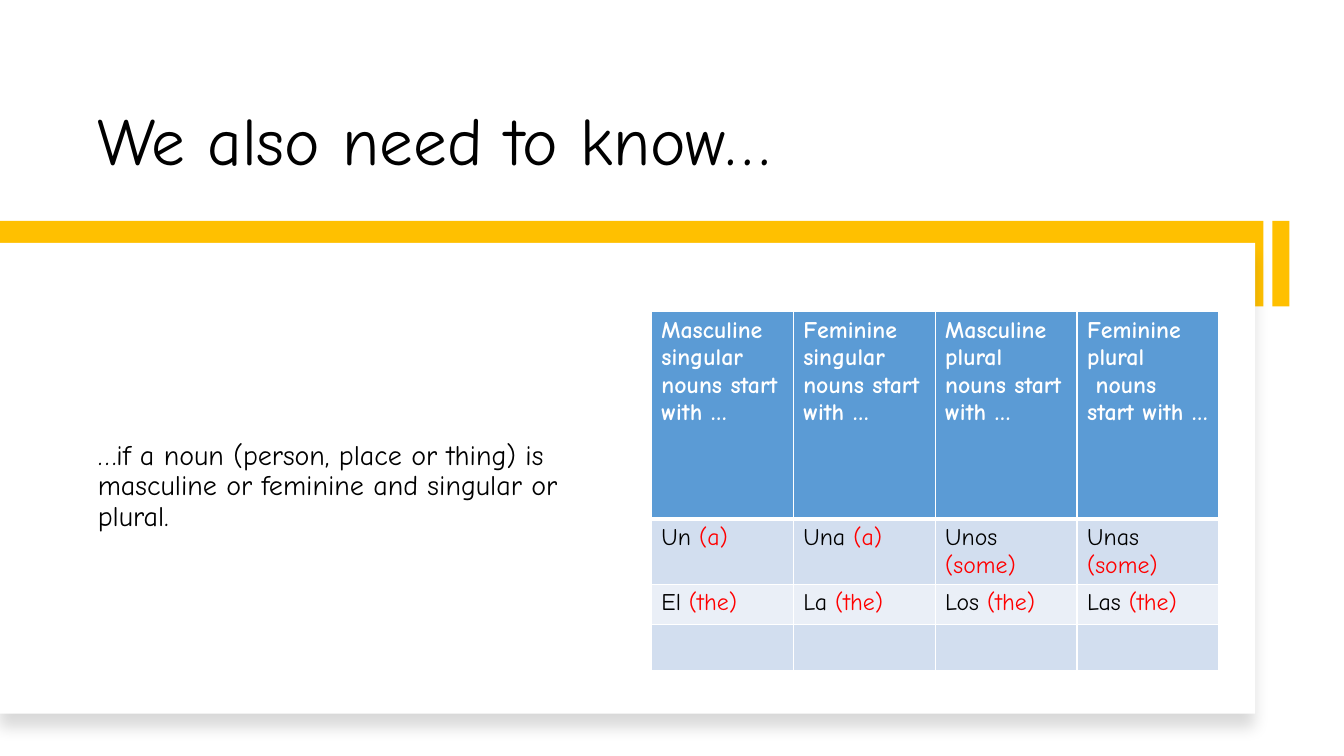
from dataclasses import dataclass

from lxml import etree
from pptx import Presentation
from pptx.dml.color import RGBColor
from pptx.enum import shapes, text
from pptx.oxml import ns
from pptx.util import Inches, Pt

# Content
HEADING = "We also need to know…"
EXPLANATION = ("…if a noun (person, place or thing) is masculine or feminine "
               "and singular or plural.")
NOUN_KINDS = [
    "Masculine singular nouns start with …",
    "Feminine singular\nnouns start with …",
    "Masculine plural\nnouns start with …",
    "Feminine\nplural\n nouns start with …",
]
ARTICLES = [  # (Spanish article, English meaning)
    [("Un ", "(a)"), ("Una ", "(a)"), ("Unos ", "(some)"), ("Unas\n", "(some)")],
    [("El ", "(the)"), ("La ", "(the)"), ("Los ", "(the)"), ("Las ", "(the)")],
    [("", "")] * 4,
]
ROW_HEIGHTS = [2.06, 0.4, 0.4, 0.46]


@dataclass(frozen=True)
class Theme:
    font: str = "Comic Neue"
    title_size: int = 48
    body_size: int = 20
    table_size: int = 17
    ink: str = "000000"
    paper: str = "FFFFFF"
    accent: str = "FFC000"
    meaning: str = "FF0000"
    header: str = "5B9BD5"
    bands: tuple = ("D2DEEF", "EAEFF7")


THEME = Theme()


def box(left, top, width, height):
    return [Inches(n) for n in (left, top, width, height)]


def style(run, size, color, bold=False):
    run.font.name = THEME.font
    run.font.size = Pt(size)
    run.font.bold = bold
    run.font.color.rgb = RGBColor.from_string(color)


def fill_placeholder(holder, words, place, size, anchor):
    holder.left, holder.top, holder.width, holder.height = box(*place)
    frame = holder.text_frame
    frame.text = words
    frame.word_wrap = True
    frame.auto_size = text.MSO_AUTO_SIZE.NONE
    frame.vertical_anchor = anchor
    line = frame.paragraphs[0]
    line.alignment = text.PP_ALIGN.LEFT
    line.line_spacing = 0.9
    style(line.runs[0], size, THEME.ink)
    return line


def add_panel(slide, place, color):
    panel = slide.shapes.add_shape(shapes.MSO_SHAPE.RECTANGLE, *box(*place))
    panel.shadow.inherit = False
    panel.fill.solid()
    panel.fill.fore_color.rgb = RGBColor.from_string(color)
    panel.line.fill.background()
    return panel


def add_soft_shadow(panel):
    effects = panel.element.spPr.find(ns.qn("a:effectLst"))
    shadow = etree.SubElement(
        effects, ns.qn("a:outerShdw"), blurRad=str(Pt(11)), dist=str(Pt(10)),
        dir=str(90 * 60000), algn="t", rotWithShape="0")
    color = etree.SubElement(shadow, ns.qn("a:srgbClr"), val=THEME.ink)
    etree.SubElement(color, ns.qn("a:alpha"), val="15000")


def add_borders(cell, top, bottom):
    props = cell._tc.get_or_add_tcPr()
    for place, (side, width) in enumerate(
            [("L", 1), ("R", 1), ("T", top), ("B", bottom)]):
        edge = etree.Element(ns.qn("a:ln" + side), w=str(Pt(width)))
        solid = etree.SubElement(edge, ns.qn("a:solidFill"))
        etree.SubElement(solid, ns.qn("a:srgbClr"), val=THEME.paper)
        props.insert(place, edge)


def add_article_table(slide):
    frame = slide.shapes.add_table(
        len(ROW_HEIGHTS), len(NOUN_KINDS),
        *box(6.46, 3.09, 5.63, sum(ROW_HEIGHTS)))
    table = frame.table
    table.first_row = table.horz_banding = False
    rows = [[(kind, "") for kind in NOUN_KINDS]] + ARTICLES
    for r, entries in enumerate(rows):
        table.rows[r].height = Inches(ROW_HEIGHTS[r])
        is_header = r == 0
        color = THEME.header if is_header else THEME.bands[(r - 1) % 2]
        for c, (words, meaning) in enumerate(entries):
            cell = table.cell(r, c)
            cell.fill.solid()
            cell.fill.fore_color.rgb = RGBColor.from_string(color)
            add_borders(cell, top=3 if r == 1 else 1, bottom=3 if is_header else 1)
            cell.text = words
            for line in cell.text_frame.paragraphs:
                for run in line.runs:
                    style(run, THEME.table_size,
                          THEME.paper if is_header else THEME.ink, is_header)
            if meaning:
                gloss = cell.text_frame.paragraphs[-1].add_run()
                gloss.text = meaning
                style(gloss, THEME.table_size, THEME.meaning)


def main():
    deck = Presentation()
    deck.slide_width, deck.slide_height = Inches(13.33), Inches(7.5)
    slide = deck.slides.add_slide(deck.slide_layouts[1])
    heading, explanation = slide.placeholders

    # Heading
    fill_placeholder(heading, HEADING, (0.87, 0.42, 11.01, 1.42),
                     THEME.title_size, text.MSO_ANCHOR.BOTTOM)

    # Gold band and white card
    add_panel(slide, (0, 2.19, 12.53, 0.85), THEME.accent)
    card = add_panel(slide, (0, 2.41, 12.45, 4.67), THEME.paper)
    add_soft_shadow(card)

    # Explanation, brought in front of the card and without a bullet
    line = fill_placeholder(explanation, EXPLANATION, (0.87, 2.84, 4.96, 3.98),
                            THEME.body_size, text.MSO_ANCHOR.MIDDLE)
    line.space_before = Pt(10)
    props = line._p.get_or_add_pPr()
    props.set("marL", "0")
    props.set("indent", "0")
    etree.SubElement(props, ns.qn("a:buNone"))
    card.element.addnext(explanation.element)

    # Gold end bar
    add_panel(slide, (12.62, 2.19, 0.17, 0.85), THEME.accent)

    # Articles by gender and number
    add_article_table(slide)

    deck.save("out.pptx")


if __name__ == "__main__":
    main()
